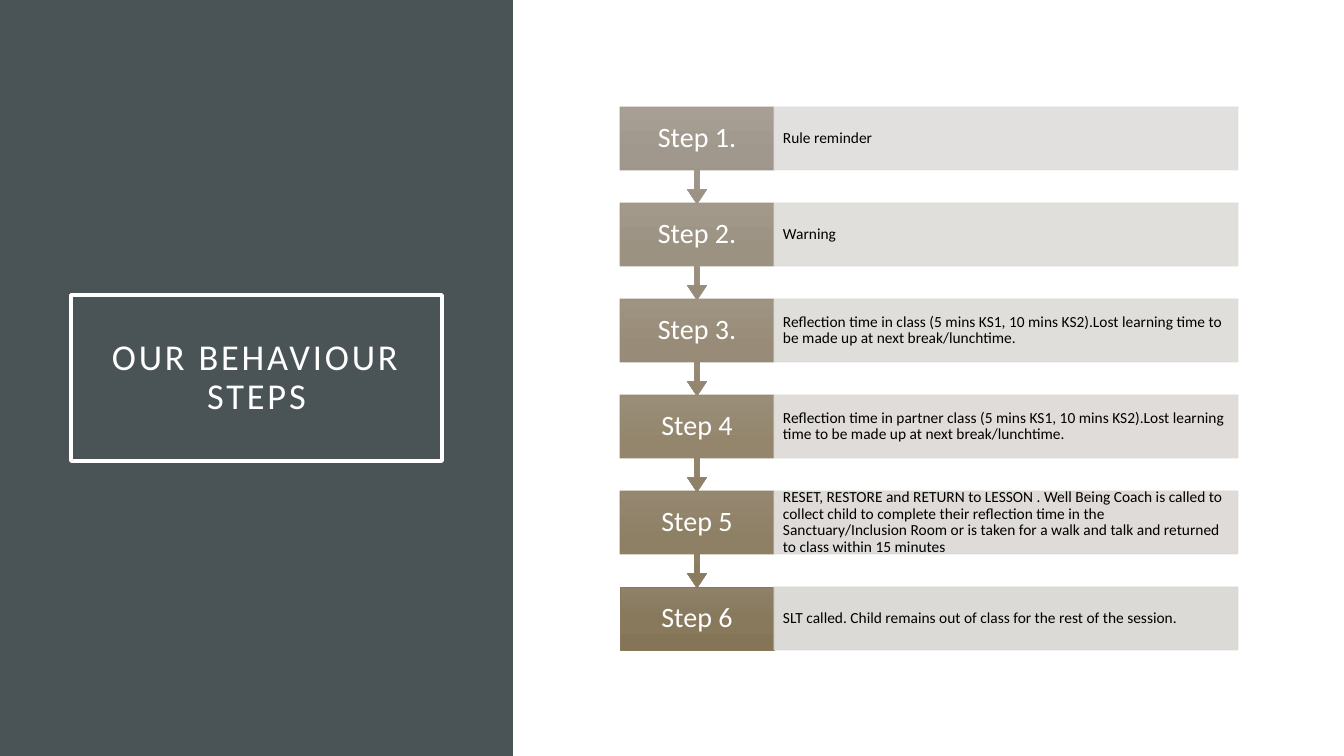
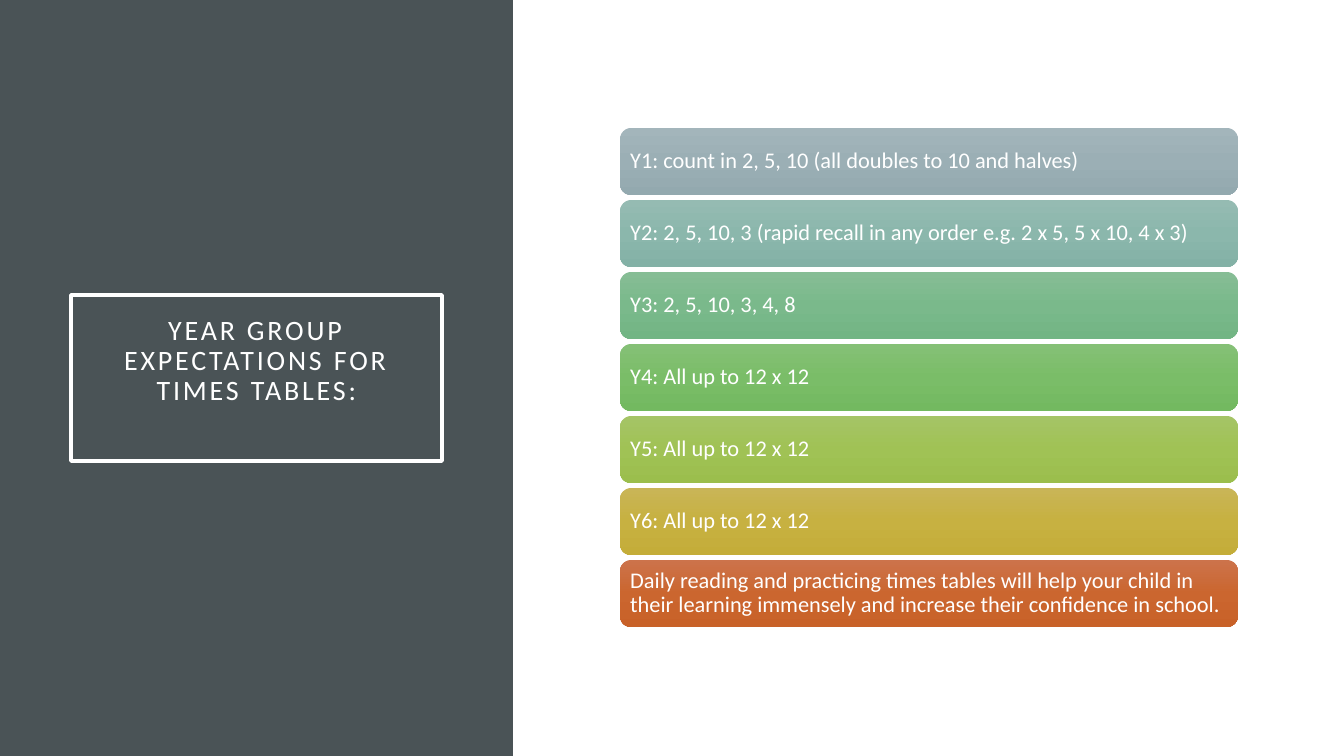
from copy import deepcopy
from dataclasses import dataclass
from lxml.etree import SubElement
from pptx import Presentation
from pptx.dml.color import RGBColor
from pptx.enum.shapes import MSO_SHAPE
from pptx.enum.text import MSO_ANCHOR, MSO_AUTO_SIZE, PP_ALIGN
from pptx.oxml.ns import qn
from pptx.util import Emu, Pt


@dataclass(frozen=True)
class Theme:
    font: str = "Calibri"
    slate: str = "4A5356"
    white: str = "FFFFFF"
    black: str = "000000"
    head: int = 26
    small: int = 20
    step: int = 20
    note: int = 11
    goal: int = 16
    thick: float = 2.5
    thin: float = 0.5


THEME = Theme()
PX = 914400 / 100.8
WIDE, HIGH = 1344, 756
LEFT, SPAN = 620, 618


def write(shape, text, size, color, align, pads):
    """Fill a shape with one paragraph; pads are left, top, right, bottom in px."""
    frame = shape.text_frame
    frame.text = text
    para = frame.paragraphs[0]
    left, top, right, bottom = [Emu(round(n * PX)) for n in pads]
    looks = [
        (frame, {"word_wrap": True, "auto_size": MSO_AUTO_SIZE.NONE,
                 "vertical_anchor": MSO_ANCHOR.MIDDLE,
                 "margin_left": left, "margin_top": top,
                 "margin_right": right, "margin_bottom": bottom}),
        (para, {"alignment": align, "line_spacing": 0.9}),
        (para.runs[0].font, {"name": THEME.font, "size": Pt(size)}),
    ]
    for item, values in looks:
        for key, value in values.items():
            setattr(item, key, value)
    para.runs[0].font.color.rgb = RGBColor.from_string(color)


def block(slide, kind, box, colors, edge=0):
    """Add a shape with a plain fill, or a downward gradient for three colors."""
    shape = slide.shapes.add_shape(kind, *[Emu(round(n * PX)) for n in box])
    shape.shadow.inherit = False
    main = RGBColor.from_string(colors[len(colors) // 2])
    if len(colors) == 1:
        shape.fill.solid()
        shape.fill.fore_color.rgb = main
    else:
        shape.fill.gradient()
        shape.fill.gradient_angle = 270
        first = shape._element.spPr.find(".//" + qn("a:gs"))
        first.addnext(deepcopy(first))
        for i, stop in enumerate(shape.fill.gradient_stops):
            stop.position = i / 2
            stop.color.rgb = RGBColor.from_string(colors[i])
    if edge:
        shape.line.width = Pt(edge)
        shape.line.color.rgb = main
    else:
        shape.line.fill.background()
    return shape


deck = Presentation()
deck.slide_width = Emu(round(WIDE * PX))
deck.slide_height = Emu(round(HIGH * PX))

# Side band and framed title, shared by both slides
heads = [
    ("OUR BEHAVIOUR STEPS", THEME.head, 20),
    ("YEAR GROUP EXPECTATIONS FOR TIMES TABLES:", THEME.small, 53),
]
slides = []
for text, size, foot in heads:
    slide = deck.slides.add_slide(deck.slide_layouts[5])
    band = block(slide, MSO_SHAPE.RECTANGLE, (0, 0, 513, HIGH), [THEME.slate])
    slide.shapes._spTree.insert(2, band._element)
    title = slide.shapes.title
    place = {"left": 71, "top": 295, "width": 371, "height": 166}
    for key, value in place.items():
        setattr(title, key, Emu(round(value * PX)))
    title.line.width = Pt(THEME.thick)
    title.line.color.rgb = RGBColor.from_string(THEME.white)
    write(title, text, size, THEME.white, PP_ALIGN.CENTER, (20, 20, 20, foot))
    title.text_frame.paragraphs[0].runs[0].font._element.set("spc", "200")
    slides.append(slide)

# Behaviour steps
steps = [
    ("Step 1.", "Rule reminder",
     ["A79F95", "A0988C", "9B9285"], "DFDDDB"),
    ("Step 2.", "Warning",
     ["A2998B", "9C9282", "978C7B"], "DEDCD9"),
    ("Step 3.", "Reflection time in class (5 mins KS1, 10 mins KS2).Lost learning "
     "time to be made up at next break/lunchtime.",
     ["9E9482", "988C78", "938671"], "DDDBD7"),
    ("Step 4", "Reflection time in partner class (5 mins KS1, 10 mins KS2).Lost "
     "learning time to be made up at next break/lunchtime.",
     ["9A8E79", "94866D", "8F8167"], "DCD9D5"),
    ("Step 5", "RESET, RESTORE and RETURN to LESSON . Well Being Coach is called "
     "to collect child to complete their reflection time in the "
     "Sanctuary/Inclusion Room or is taken for a walk and talk and returned to "
     "class within 15 minutes",
     ["958871", "8E8064", "8A7B5F"], "DBD8D4"),
    ("Step 6", "SLT called. Child remains out of class for the rest of the session.",
     ["8F8269", "88795C", "847557"], "D9D7D2"),
]
TALL, TAB = 63, 154
for i, (name, note, shades, pale) in enumerate(steps):
    top = 107 + 96 * i
    last = i == len(steps) - 1
    kind = MSO_SHAPE.RECTANGLE if last else MSO_SHAPE.DOWN_ARROW_CALLOUT
    step = block(slides[0], kind, (LEFT, top, TAB, TALL if last else 97),
                 shades, THEME.thin)
    if not last:
        for j, ratio in enumerate((0.05, 0.1, 0.15, 0.65)):
            step.adjustments[j] = ratio
    write(step, name, THEME.step, THEME.white, PP_ALIGN.CENTER, (11, 16, 11, 16))

    panel = block(slides[0], MSO_SHAPE.RECTANGLE,
                  (LEFT + TAB, top, SPAN - TAB, TALL), [pale], THEME.thin)
    for tint in panel._element.spPr.iter(qn("a:srgbClr")):
        SubElement(tint, qn("a:alpha"), val="90000")
    write(panel, note, THEME.note, THEME.black, PP_ALIGN.LEFT, (9, 15, 9, 15))

# Times tables by year group
goals = [
    ("Y1: count in 2, 5, 10 (all doubles to 10 and halves)",
     ["A3B5BB", "9BAFB5", "93A9AF"]),
    ("Y2: 2, 5, 10, 3 (rapid recall in any order e.g. 2 x 5, 5 x 10, 4 x 3)",
     ["95BBB2", "8BB7AC", "83B1A6"]),
    ("Y3: 2, 5, 10, 3, 4, 8", ["86BD95", "7AB98B", "72B584"]),
    ("Y4: All up to 12 x 12", ["85C076", "7ABD68", "73B960"]),
    ("Y5: All up to 12 x 12", ["A5C466", "A0C255", "9BBE4D"]),
    ("Y6: All up to 12 x 12", ["C9B557", "C7B141", "C4AD39"]),
    ("Daily reading and practicing times tables will help your child in their "
     "learning immensely and increase their confidence in school.",
     ["CC734B", "CB662F", "C86128"]),
]
for i, (goal, shades) in enumerate(goals):
    bar = block(slides[1], MSO_SHAPE.ROUNDED_RECTANGLE,
                (LEFT, 128 + 72 * i, SPAN, 67), shades)
    # The preset already insets its text by about 3 px
    write(bar, goal, THEME.goal, THEME.white, PP_ALIGN.LEFT, (7, 7, 7, 7))

deck.save("out.pptx")
